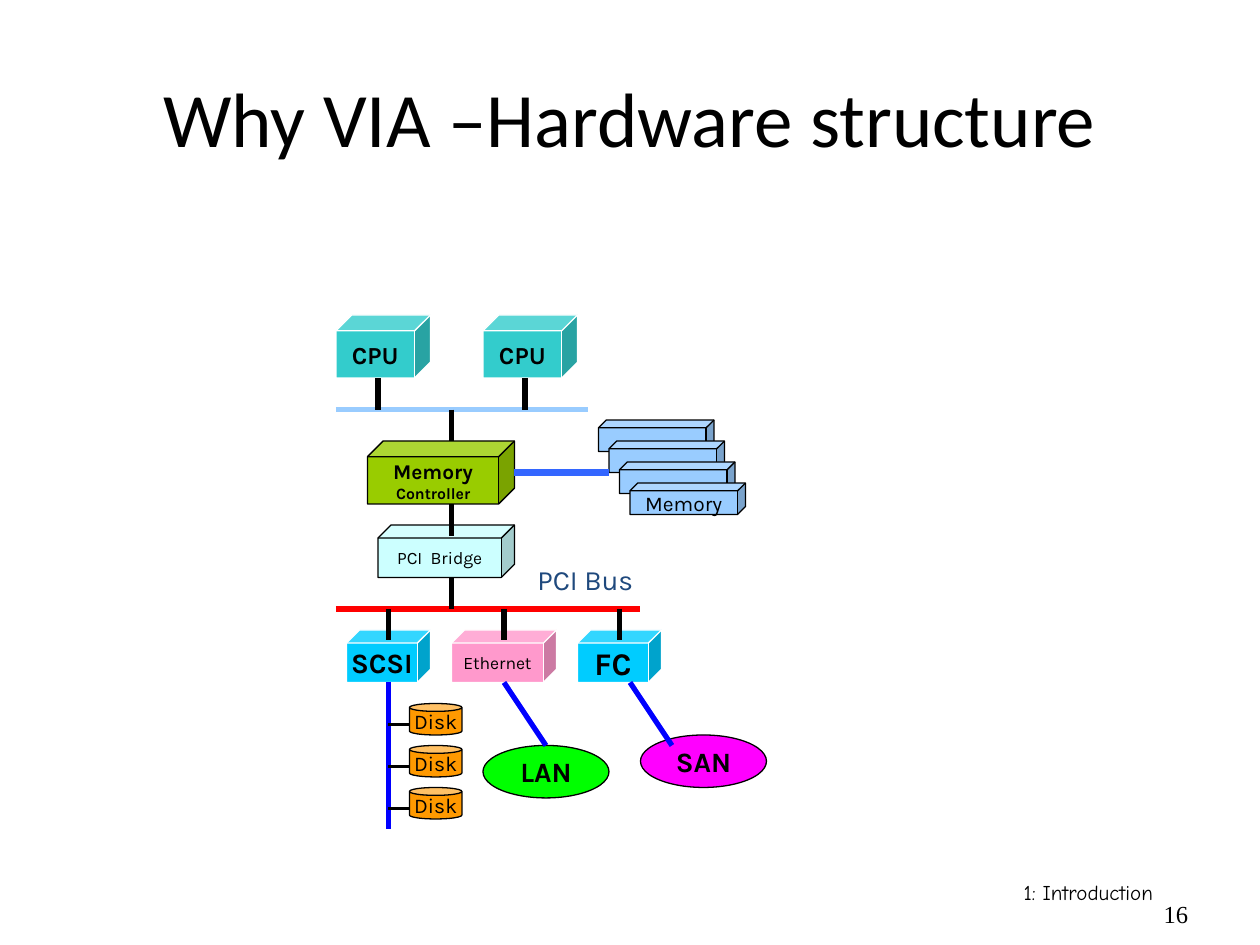
from dataclasses import dataclass

from lxml import etree
from pptx import Presentation
from pptx import util as u
from pptx.dml.color import RGBColor
from pptx.enum import shapes, text
from pptx.oxml.ns import qn


@dataclass(frozen=True)
class Theme:
    black: str = "000000"
    white: str = "FFFFFF"
    cpu: str = "33CCCC"
    controller: str = "99CC00"
    memory: str = "99CCFF"
    memory_link: str = "3366FF"
    bridge: str = "CCFFFF"
    adapter: str = "00CCFF"
    ethernet: str = "FF99CC"
    san: str = "FF00FF"
    lan: str = "00FF00"
    disk: str = "FF9900"
    pci_bus: str = "FF0000"
    cable: str = "0000FF"
    label: str = "1F497D"
    body: str = "Karla"
    heading: str = "Calibri"
    tiny: int = 9
    small: int = 10
    normal: int = 12
    medium: int = 14
    large: int = 16
    huge: int = 18
    title: int = 44
    outline: float = 0.75
    thin: float = 1.75
    wire: float = 3
    thick: float = 3.5


T = Theme()
CELL = u.Inches(1) / 12  # the diagram sits on a grid of 120 columns by 90 rows
CUBE, CAN, OVAL = (shapes.MSO_SHAPE.CUBE, shapes.MSO_SHAPE.CAN,
                   shapes.MSO_SHAPE.OVAL)

# Content: kind, (column, row, columns, rows), fill, outline, [(text, size, bold)]
TITLE = "Why VIA –Hardware structure"
CPU_COLUMNS = (32, 46)
MEMORY_BANKS = 4
DISK_ROWS = (67, 71, 75)

PARTS = [(CUBE, (column, 30, 9, 6), T.cpu, T.white, [("CPU", T.medium, True)])
         for column in CPU_COLUMNS]
PARTS += [
    (CUBE, (35, 42, 14, 6), T.controller, T.black,
     [("Memory", T.normal, True), ("Controller", T.tiny, True)]),
    (CUBE, (36, 50, 13, 5), T.bridge, T.black, [("PCI  Bridge", T.small, False)]),
]
PARTS += [(CUBE, (57 + bank, 40 + 2 * bank, 11, 3), T.memory, T.black,
           [("Memory", T.normal, False)] if bank == MEMORY_BANKS - 1 else [])
          for bank in range(MEMORY_BANKS)]
PARTS += [
    (CUBE, (33, 60, 8, 5), T.adapter, T.white, [("SCSI", T.large, True)]),
    (CUBE, (43, 60, 10, 5), T.ethernet, T.white, [("Ethernet", T.small, False)]),
    (CUBE, (55, 60, 8, 5), T.adapter, T.white, [("FC", T.huge, True)]),
    (OVAL, (61, 70, 12, 5), T.san, T.black, [("SAN", T.large, True)]),
    (OVAL, (46, 71, 12, 5), T.lan, T.black, [("LAN", T.large, True)]),
]
PARTS += [(CAN, (39, row, 5, 3), T.disk, T.black, [("Disk", T.normal, False)])
          for row in DISK_ROWS]

# Wires: start column and row, end column and row, colour, width
WIRES = [
    (32, 39, 56, 39, T.memory, T.wire),
    (49, 45, 58, 45, T.memory_link, T.thick),
    (32, 58, 61, 58, T.pci_bus, T.thick),
]
WIRES += [(column + 4, 36, column + 4, 39, T.black, T.wire)
          for column in CPU_COLUMNS]
WIRES += [(43, row, 43, row + 3, T.black, T.wire) for row in (39, 48, 55)]
WIRES += [(column, 58, column, 61, T.black, T.wire) for column in (37, 48, 59)]
WIRES += [(37, 65, 37, 79, T.cable, T.wire)]
WIRES += [(37, row + 2, 39, row + 2, T.black, T.thin) for row in DISK_ROWS]
WIRES += [(column, 65, column + 4, 71, T.cable, T.wire) for column in (48, 60)]

# Labels: text, (column, row, columns, rows), format
LABELS = [
    ("PCI Bus", (50, 53, 11.5, 4.45),
     dict(size=T.large, color=T.label, wrap=False,
          anchor=text.MSO_ANCHOR.TOP, align=text.PP_ALIGN.LEFT)),
    ("1: Introduction", (86, 82, 25, 6),
     dict(size=T.normal, font="Comic Neue", align=text.PP_ALIGN.RIGHT)),
    ("16", (109, 84, 6, 6), dict(size=T.medium, font="Times New Roman")),
]


def grid(*cells):
    return [u.Emu(round(cell * CELL)) for cell in cells]


def write(frame, content, *, size=T.normal, bold=False, color=T.black,
          font=T.body, align=text.PP_ALIGN.CENTER,
          anchor=text.MSO_ANCHOR.MIDDLE, wrap=True, first=True):
    frame.word_wrap = wrap
    frame.vertical_anchor = anchor
    para = frame.paragraphs[0] if first else frame.add_paragraph()
    para.alignment = align
    span = para.add_run()
    span.text = content
    span.font.name = font
    span.font.size = u.Pt(size)
    span.font.bold = bold
    span.font.color.rgb = RGBColor.from_string(color)


def add_part(page, kind, cells, fill, outline, lines):
    part = page.shapes.add_shape(kind, *grid(*cells))
    part.shadow.inherit = False
    part.fill.solid()
    part.fill.fore_color.rgb = RGBColor.from_string(fill)
    part.line.color.rgb = RGBColor.from_string(outline)
    part.line.width = u.Pt(T.outline)
    if kind != OVAL:
        part.adjustments[0] = 0.25
    for index, (content, size, bold) in enumerate(lines):
        write(part.text_frame, content, size=size, bold=bold, wrap=False,
              first=index == 0)


def add_wire(page, x1, y1, x2, y2, color, width):
    wire = page.shapes.add_connector(shapes.MSO_CONNECTOR.STRAIGHT,
                                     *grid(x1, y1, x2, y2))
    wire.line.color.rgb = RGBColor.from_string(color)
    wire.line.width = u.Pt(width)
    etree.SubElement(wire.element.spPr, qn("a:effectLst"))


def main():
    deck = Presentation()
    deck.slide_width, deck.slide_height = grid(120, 90)
    page = deck.slides.add_slide(deck.slide_layouts[5])

    # Title
    title = page.shapes.title
    title.left, title.top, title.width, title.height = grid(6, 3.6, 108, 15)
    write(title.text_frame, TITLE, size=T.title, font=T.heading)

    # Hardware diagram, with the wires on top
    for part in PARTS:
        add_part(page, *part)
    for wire in WIRES:
        add_wire(page, *wire)

    # Bus label, footer and page number
    for content, cells, style in LABELS:
        box = page.shapes.add_textbox(*grid(*cells))
        write(box.text_frame, content, **style)

    deck.save("out.pptx")


if __name__ == "__main__":
    main()
